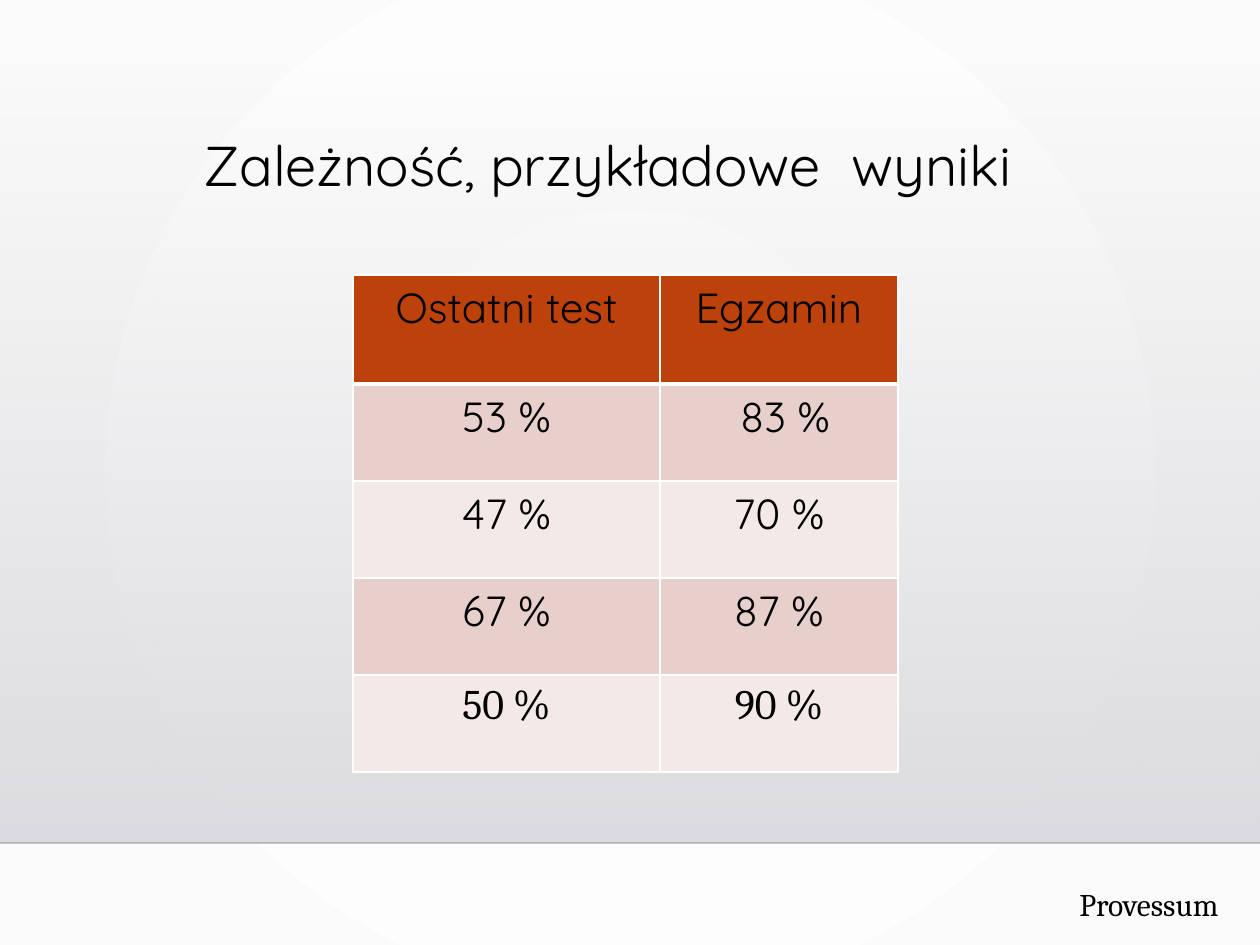
from lxml.etree import SubElement
from pptx import Presentation
from pptx.dml.color import RGBColor
from pptx.enum.shapes import MSO_CONNECTOR, MSO_SHAPE
from pptx.enum.text import MSO_ANCHOR, MSO_AUTO_SIZE, PP_ALIGN
from pptx.oxml import parse_xml
from pptx.oxml.ns import nsdecls, qn
from pptx.util import Emu, Pt

COLORS = {
    "black": "000000", "white": "FFFFFF", "page_edge": "FAFAFA",
    "shade_top": "DCDCE0", "shade_bottom": "DEDEE2", "rule": "000001",
    "header": "BC410A", "band_dark": "E7CFCC", "band_light": "F3E9E7",
}
BODY, SERIF = "Quicksand", "Cambria"
ROWS = [
    ("Ostatni test", "Egzamin"),
    ("53 %", "83 %"),
    ("47 %", "70 %"),
    ("67 %", "87 %"),
    ("50 %", "90 %"),
]


def px(n):
    return Emu(round(n * 914400 / 126))


def rgb(name):
    return RGBColor.from_string(COLORS[name])


def set_gradient(fill, start, end, direction, start_alpha=100):
    """Fill with two colours; direction is the XML of a:lin or a:path."""
    fill.gradient()
    grad = fill._xPr.find(qn("a:gradFill"))
    stops = (
        f'<a:gs pos="0"><a:srgbClr val="{COLORS[start]}">'
        f'<a:alpha val="{start_alpha * 1000}"/></a:srgbClr></a:gs>'
        f'<a:gs pos="100000"><a:srgbClr val="{COLORS[end]}"/></a:gs>'
    )
    grad.getparent().replace(grad, parse_xml(
        f'<a:gradFill {nsdecls("a")} rotWithShape="1">'
        f'<a:gsLst>{stops}</a:gsLst>{direction}</a:gradFill>'))


def write(tf, text, size, font=BODY, align=PP_ALIGN.CENTER, spacing=None):
    p = tf.paragraphs[0]
    p.alignment, p.line_spacing = align, spacing
    r = p.add_run()
    r.text = text
    for name, value in {"size": Pt(size), "name": font, "bold": False}.items():
        setattr(r.font, name, value)
    r.font.color.rgb = rgb("black")


def add_backdrop(s, x, y, w, h):
    set_gradient(
        s.background.fill, "white", "page_edge",
        '<a:path path="circle">'
        '<a:fillToRect l="50000" t="50000" r="50000" b="50000"/></a:path>')
    shade = s.shapes.add_shape(MSO_SHAPE.RECTANGLE, px(x), px(y), px(w), px(h))
    shade.shadow.inherit = False
    shade.line.fill.background()
    set_gradient(shade.fill, "shade_top", "shade_bottom",
                 '<a:lin ang="5400000" scaled="0"/>', start_alpha=0)

    rule = s.shapes.add_connector(
        MSO_CONNECTOR.STRAIGHT, px(x), px(y + h), px(x + w), px(y + h))
    rule.line.width = Pt(1)
    rule.line.color.rgb = rgb("rule")
    color = rule.line._ln.find(".//" + qn("a:srgbClr"))
    SubElement(color, qn("a:alpha"), val="20000")
    SubElement(rule._element.spPr, qn("a:effectLst"))


def add_title(s, x, y, w, h, text):
    title = s.shapes.title
    s.shapes._spTree.append(title._element)  # in front of the backdrop
    title.left, title.top, title.width, title.height = map(px, (x, y, w, h))
    tf = title.text_frame
    tf.word_wrap = True
    tf.auto_size = MSO_AUTO_SIZE.NONE
    tf.vertical_anchor = MSO_ANCHOR.TOP
    write(tf, text, 32, spacing=0.9)


def set_borders(cell, bottom):
    tcPr = cell._tc.get_or_add_tcPr()
    widths = {"lnL": 1, "lnR": 1, "lnT": 1, "lnB": bottom}
    for i, (tag, width) in enumerate(widths.items()):
        tcPr.insert(i, parse_xml(
            f'<a:{tag} {nsdecls("a")} w="{Pt(width)}"><a:solidFill>'
            f'<a:srgbClr val="{COLORS["white"]}"/></a:solidFill></a:{tag}>'))


def add_results_table(s, x, y, col_widths, row_heights):
    table = s.shapes.add_table(
        len(ROWS), len(col_widths), px(x), px(y),
        px(sum(col_widths)), px(sum(row_heights))).table
    for col, width in zip(table.columns, col_widths):
        col.width = px(width)
    for row, height in zip(table.rows, row_heights):
        row.height = px(height)
    last = len(ROWS) - 1
    for i, values in enumerate(ROWS):
        fill = "header" if i == 0 else ("band_light", "band_dark")[i % 2]
        for j, value in enumerate(values):
            cell = table.cell(i, j)
            cell.fill.solid()
            cell.fill.fore_color.rgb = rgb(fill)
            set_borders(cell, bottom=3 if i == 0 else 1)
            write(cell.text_frame, value, 24, SERIF if i == last else BODY)
    table.cell(1, 1).margin_left = px(25)


def add_footer(s, x, y, w, h, text):
    tf = s.shapes.add_textbox(px(x), px(y), px(w), px(h)).text_frame
    tf.word_wrap = True
    write(tf, text, 18, SERIF, PP_ALIGN.LEFT)


def main():
    prs = Presentation()
    prs.slide_width, prs.slide_height = px(1260), px(945)
    s = prs.slides.add_slide(prs.slide_layouts[5])
    add_backdrop(s, 0, 64, 1260, 779)
    add_title(s, 155, 132, 906, 145, "Zależność, przykładowe  wyniki")
    add_results_table(s, 353, 275, (307, 238), (109, 97, 97, 97, 97))
    add_footer(s, 1067, 879, 193, 60, "Provessum")
    prs.save("out.pptx")


if __name__ == "__main__":
    main()
